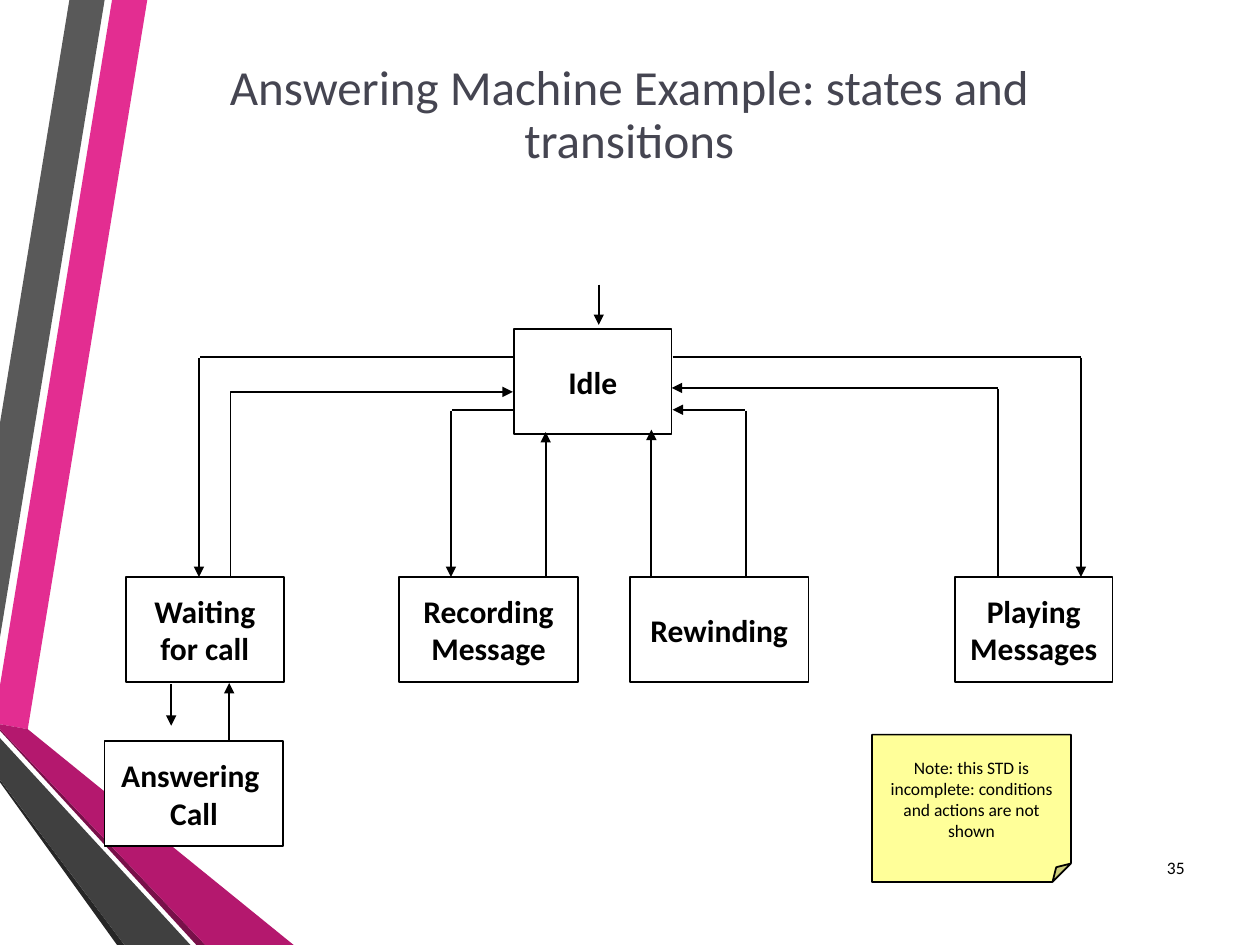
"""Build the answering machine state diagram slide."""
import dataclasses

import lxml.etree
import pptx
import pptx.dml.color
import pptx.enum.shapes
import pptx.enum.text
import pptx.oxml.ns
import pptx.util

Cm = pptx.util.Cm
SHAPES = pptx.enum.shapes.MSO_SHAPE
ALIGN = pptx.enum.text.PP_ALIGN


@dataclasses.dataclass(frozen=True)
class Theme:
    """Colours, font and sizes of the slide."""
    font: str = "Calibri"
    ink: str = "000000"
    title: str = "454551"
    paper: str = "FFFFFF"
    note: str = "FFFF99"
    pink: str = "E32D91"
    dark_pink: str = "B4186E"
    pink_shade: str = "781049"
    grey: str = "595959"
    dark_grey: str = "404040"
    grey_shade: str = "262626"
    title_size: int = 28
    state_size: int = 18
    small_size: int = 10
    line_width: int = 1


THEME = Theme()

RIBBONS = [
    (THEME.pink, [(0, 13.82), (0, 14.6), (0.56, 14.7), (2.97, 0), (2.26, 0)]),
    (THEME.grey, [(2.11, 0), (1.4, 0), (0, 8.53), (0, 12.85)]),
    (THEME.grey_shade, [(0, 15.72), (0, 15.77), (2.36, 19.05), (2.51, 19.05)]),
    (THEME.pink_shade, [(0, 14.7), (0, 14.73), (3.96, 19.05), (4.14, 19.05)]),
    (THEME.dark_pink, [(0, 14.7), (4.14, 19.05), (5.92, 19.05), (0.56, 14.7), (0, 14.6)]),
    (THEME.dark_grey, [(0, 15.72), (2.51, 19.05), (3.84, 19.05), (0, 14.88)]),
]

STATE_HEIGHT = 2.12
NARROW, WIDE = 3.18, 3.6
ROW_TOP = 11.63
STATES = [
    (["Idle"], 10.36, 6.63, NARROW),
    (["Playing", "Messages"], 19.25, ROW_TOP, NARROW),
    (["Rewinding"], 12.7, ROW_TOP, WIDE),
    (["Recording", "Message"], 8.05, ROW_TOP, WIDE),
    (["Waiting", "for call"], 2.54, ROW_TOP, NARROW),
    (["Answering ", "Call"], 2.11, 14.94, WIDE),
]

PLAIN_LINES = [
    ((4.04, 7.19), (10.36, 7.19)),
    ((9.12, 8.26), (10.36, 8.26)),
    ((13.56, 7.19), (21.79, 7.19)),
    ((20.12, 7.85), (20.12, ROW_TOP)),
    ((15.04, 8.28), (15.04, ROW_TOP)),
]
ARROWS = [
    ((9.09, 8.28), (9.09, ROW_TOP)),
    ((4.01, 7.21), (4.01, ROW_TOP)),
    ((11, ROW_TOP), (11, 8.71)),
    ((13.13, 11.66), (13.13, 8.66)),
    ((21.79, 7.21), (21.79, ROW_TOP)),
    ((20.12, 7.82), (13.54, 7.82)),
    ((15.01, 8.26), (13.56, 8.26)),
    ((3.45, 13.79), (3.45, 14.63)),
    ((12.07, 5.74), (12.07, 6.55)),
    ((4.62, 14.94), (4.62, 13.77)),
]
WAITING_TO_IDLE = [(4.65, ROW_TOP), (4.65, 7.9), (10.34, 7.9)]


def rgb(value):
    """Return the colour object for a hex string."""
    return pptx.dml.color.RGBColor.from_string(value)


def apply_format(target, values):
    """Set each named attribute on the target."""
    for name, value in values.items():
        setattr(target, name, value)


def fill_shape(shape, colour):
    """Give a shape a solid fill and no shadow."""
    shape.shadow.inherit = False
    shape.fill.solid()
    shape.fill.fore_color.rgb = rgb(colour)


def draw_line(shape, arrow=False):
    """Style the line of a shape, with an arrowhead at its end if asked."""
    shape.line.color.rgb = rgb(THEME.ink)
    shape.line.width = pptx.util.Pt(THEME.line_width)
    if arrow:
        outline = shape.element.spPr.find(pptx.oxml.ns.qn("a:ln"))
        lxml.etree.SubElement(outline, pptx.oxml.ns.qn("a:tailEnd"), type="triangle")


def write_text(shape, lines, size, colour=THEME.ink, bold=False,
               alignment=ALIGN.CENTER, line_spacing=None, wrap=True):
    """Write one paragraph per line, centred vertically."""
    frame = shape.text_frame
    apply_format(frame, {"text": "\n".join(lines), "word_wrap": wrap,
                         "vertical_anchor": pptx.enum.text.MSO_ANCHOR.MIDDLE})
    for paragraph in frame.paragraphs:
        apply_format(paragraph, {"alignment": alignment, "line_spacing": line_spacing})
        for run in paragraph.runs:
            apply_format(run.font, {"name": THEME.font, "size": pptx.util.Pt(size), "bold": bold})
            run.font.color.rgb = rgb(colour)


def add_outline(slide, points, close):
    """Add a freeform through the given points."""
    start, *rest = [(Cm(x), Cm(y)) for x, y in points]
    builder = slide.shapes.build_freeform(*start)
    builder.add_line_segments(rest, close=close)
    return builder.convert_to_shape()


def add_ribbon(slide, colour, points):
    """Add a filled decorative ribbon."""
    shape = add_outline(slide, points, close=True)
    fill_shape(shape, colour)
    shape.line.fill.background()


def add_bent_arrow(slide, points):
    """Add an open arrow with corners."""
    shape = add_outline(slide, points, close=False)
    shape.shadow.inherit = False
    shape.fill.background()
    draw_line(shape, arrow=True)


def add_label(slide, text, box, size, **options):
    """Add a text box."""
    shape = slide.shapes.add_textbox(*map(Cm, box))
    write_text(shape, [text], size, **options)


def add_box(slide, kind, lines, box, colour, size, **options):
    """Add an outlined shape with text."""
    shape = slide.shapes.add_shape(kind, *map(Cm, box))
    fill_shape(shape, colour)
    draw_line(shape)
    write_text(shape, lines, size, **options)
    return shape


def set_fold(shape, share):
    """Set the size of a folded corner as a share of the shape."""
    guides = next(shape.element.spPr.iter(pptx.oxml.ns.qn("a:avLst")))
    guides[:] = []
    lxml.etree.SubElement(guides, pptx.oxml.ns.qn("a:gd"),
                          name="adj", fmla=f"val {round(share * 100000)}")


def add_line(slide, start, end, arrow):
    """Add a straight connector."""
    connector = slide.shapes.add_connector(
        pptx.enum.shapes.MSO_CONNECTOR.STRAIGHT, *map(Cm, start + end))
    draw_line(connector, arrow)
    lxml.etree.SubElement(connector.element.spPr, pptx.oxml.ns.qn("a:effectLst"))


def main():
    """Build and save the slide."""
    presentation = pptx.Presentation()
    apply_format(presentation, {"slide_width": Cm(25.4), "slide_height": Cm(19.05)})
    slide = presentation.slides.add_slide(presentation.slide_layouts[6])
    for colour, points in RIBBONS:
        add_ribbon(slide, colour, points)
    add_label(slide, "35", (22.94, 16.97, 1.19, 1.02), THEME.small_size, alignment=ALIGN.RIGHT)
    add_label(slide, "Answering Machine Example: states and transitions",
              (2.74, 1.07, 19.89, 2.54), THEME.title_size, colour=THEME.title, line_spacing=0.9)
    for lines, left, top, width in STATES:
        add_box(slide, SHAPES.RECTANGLE, lines, (left, top, width, STATE_HEIGHT),
                THEME.paper, THEME.state_size, bold=True, wrap=False)
    for arrow, lines in ((False, PLAIN_LINES), (True, ARROWS)):
        for start, end in lines:
            add_line(slide, start, end, arrow)
    note = add_box(slide, SHAPES.FOLDED_CORNER,
                   ["Note: this STD is incomplete: conditions and actions are not shown"],
                   (17.58, 14.81, 4.01, 2.97), THEME.note, THEME.small_size)
    set_fold(note, 0.125)
    add_bent_arrow(slide, WAITING_TO_IDLE)
    presentation.save("out.pptx")


if __name__ == "__main__":
    main()
